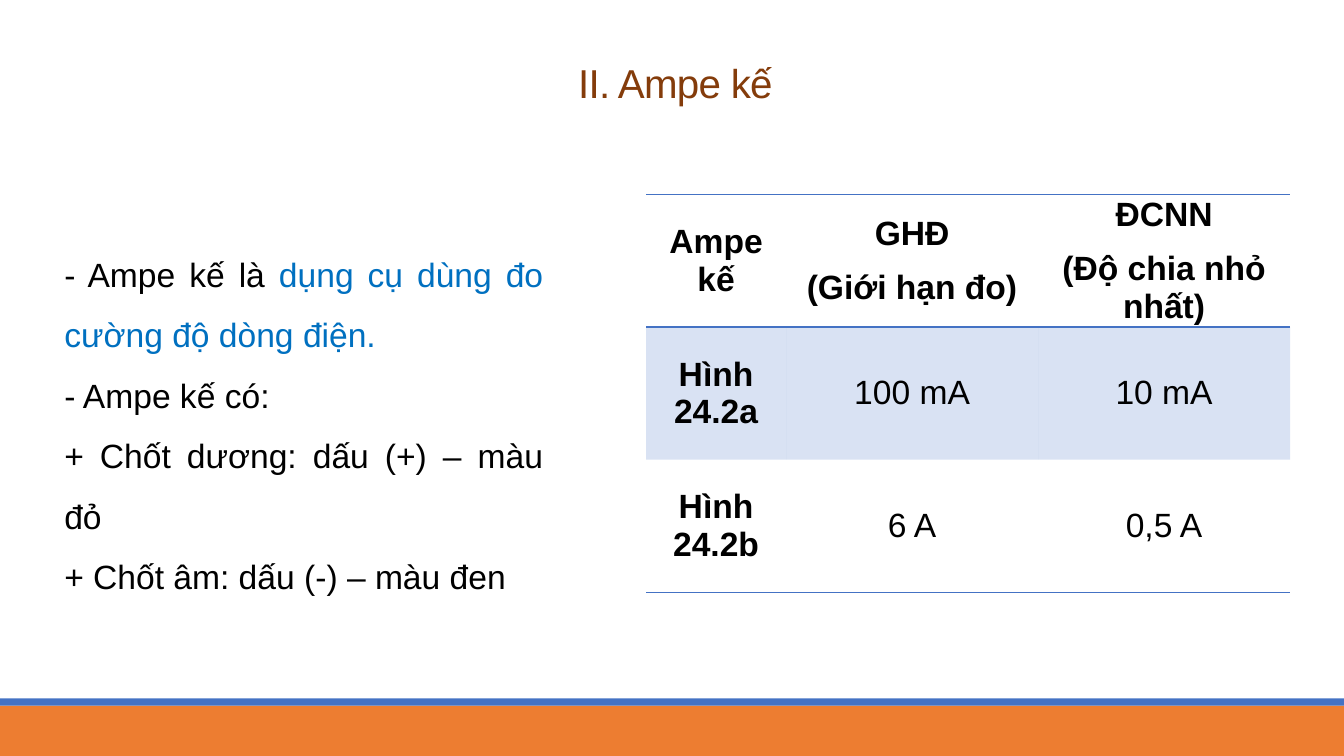
import pptx
import pptx.dml.color
import pptx.enum.dml
import pptx.enum.shapes
import pptx.enum.text
import pptx.oxml
import pptx.oxml.ns
import pptx.util

Cm = pptx.util.Cm
Pt = pptx.util.Pt
ALIGN = pptx.enum.text.PP_ALIGN
MIDDLE = pptx.enum.text.MSO_ANCHOR.MIDDLE
COLORS = {
    "orange": "ED7D31",
    "blue": "4472C4",
    "brown": "843C0B",
    "black": "000000",
    "highlight": "0070C0",
}
NO_GRID = "{2D5ABB26-0587-4C30-8999-92F81FD0307C}"
NS = pptx.oxml.ns.nsdecls("a")


def apply(obj, values):
    for name, value in values.items():
        setattr(obj, name, value)


def rgb(name):
    return pptx.dml.color.RGBColor.from_string(COLORS[name])


class SlideBuilder:
    font = "Arial"
    size = 24

    def __init__(self, prs):
        self.s = prs.slides.add_slide(prs.slide_layouts[1])

    def bar(self, top, height, color):
        sp = self.s.shapes.add_shape(
            pptx.enum.shapes.MSO_SHAPE.RECTANGLE, 0, Cm(top), Cm(33.87), Cm(height))
        sp.shadow.inherit = False
        sp.fill.solid()
        sp.fill.fore_color.rgb = rgb(color)
        sp.line.fill.background()

    def place(self, sp, box, margins):
        apply(sp, dict(zip(("left", "top", "width", "height"), map(Cm, box))))
        tf = sp.text_frame
        apply(tf, {"word_wrap": True, "vertical_anchor": MIDDLE,
                   "auto_size": pptx.enum.text.MSO_AUTO_SIZE.NONE, **margins})
        return tf

    def run(self, p, text, color="black", **font):
        r = p.add_run()
        r.text = text
        apply(r.font, {"name": self.font, "size": Pt(self.size), "bold": False, **font})
        r.font.color.rgb = rgb(color)
        return r

    def paragraphs(self, tf, items, **values):
        for i, runs in enumerate(items):
            p = tf.add_paragraph() if i else tf.paragraphs[0]
            apply(p, values)
            for text, color, font in runs:
                self.run(p, text, color, **font)

    def title(self, text, box):
        tf = self.place(self.s.shapes.title, box, {})
        p = tf.paragraphs[0]
        apply(p, {"alignment": ALIGN.CENTER, "line_spacing": 1.5})
        r = self.run(p, text, "brown", size=Pt(28.8))
        r.font._element.set("spc", "-50")

    def body(self, items, box):
        tf = self.place(self.s.placeholders[1], box, {"margin_left": 0, "margin_right": 0})
        self.paragraphs(tf, items, alignment=ALIGN.JUSTIFY, line_spacing=1.5,
                        space_before=Pt(0), space_after=Pt(0))
        for p in tf.paragraphs:
            pPr = p._p.get_or_add_pPr()
            pPr.set("marL", str(Cm(0.25)))
            pPr.set("indent", "0")
            pPr.append(pptx.oxml.parse_xml(f"<a:buNone {NS}/>"))

    def border(self, cell, side):
        cell._tc.get_or_add_tcPr().insert(0, pptx.oxml.parse_xml(
            f'<a:ln{side} {NS} w="{Pt(1)}"><a:solidFill>'
            f'<a:srgbClr val="{COLORS["blue"]}"/></a:solidFill></a:ln{side}>'))

    def shade(self, cell):
        cell.fill.solid()
        cell.fill.fore_color.rgb = rgb("blue")
        clr = cell._tc.tcPr.find(".//" + pptx.oxml.ns.qn("a:srgbClr"))
        clr.append(pptx.oxml.parse_xml(f'<a:alpha {NS} val="20000"/>'))

    def table(self, rows, left, top, widths, row_height):
        frame = self.s.shapes.add_table(
            len(rows), len(widths), Cm(left), Cm(top),
            Cm(sum(widths)), Cm(row_height * len(rows)))
        table = frame.table
        apply(table, {"first_row": False, "horz_banding": False})
        table._tbl.tblPr.find(pptx.oxml.ns.qn("a:tableStyleId")).text = NO_GRID
        for column, width in zip(table.columns, widths):
            column.width = Cm(width)
        for i, row in enumerate(rows):
            table.rows[i].height = Cm(row_height)
            for j, lines in enumerate(row):
                cell = table.cell(i, j)
                apply(cell, {"vertical_anchor": MIDDLE, "margin_left": Cm(0.1),
                             "margin_right": Cm(0.1), "margin_top": 0, "margin_bottom": 0})
                bold = i == 0 or j == 0
                self.paragraphs(
                    cell.text_frame,
                    [[(line, "black", {"bold": bold})] for line in lines],
                    alignment=ALIGN.CENTER, space_before=Pt(6), space_after=Pt(6))
                if i == 1:
                    self.shade(cell)
                else:
                    cell.fill.background()
                    self.border(cell, "B")
                if i == 0:
                    self.border(cell, "T")


def main():
    prs = pptx.Presentation()
    apply(prs, {"slide_width": Cm(33.87), "slide_height": Cm(19.05)})
    slide = SlideBuilder(prs)
    slide.bar(17.78, 1.27, "orange")
    slide.bar(17.6, 0.18, "blue")
    slide.title("II. Ampe kế", (3.05, 0.79, 27.94, 1.96))
    slide.body([
        [("- Ampe kế là ", "black", {}),
         ("dụng cụ dùng đo cường độ dòng điện.", "highlight", {})],
        [("- Ampe kế có:", "black", {})],
        [("+ Chốt dương: dấu (+) – màu đỏ", "black", {})],
        [("+ Chốt âm: dấu (-) – màu đen", "black", {})],
    ], (1.37, 3.94, 12.32, 13.03))
    slide.table([
        [["Ampe kế"], ["GHĐ", "(Giới hạn đo)"], ["ĐCNN", "(Độ chia nhỏ nhất)"]],
        [["Hình 24.2a"], ["100 mA"], ["10 mA"]],
        [["Hình 24.2b"], ["6 A"], ["0,5 A"]],
    ], 16.28, 4.9, (3.53, 6.35, 6.35), 3.34)
    prs.save("out.pptx")


if __name__ == "__main__":
    main()
